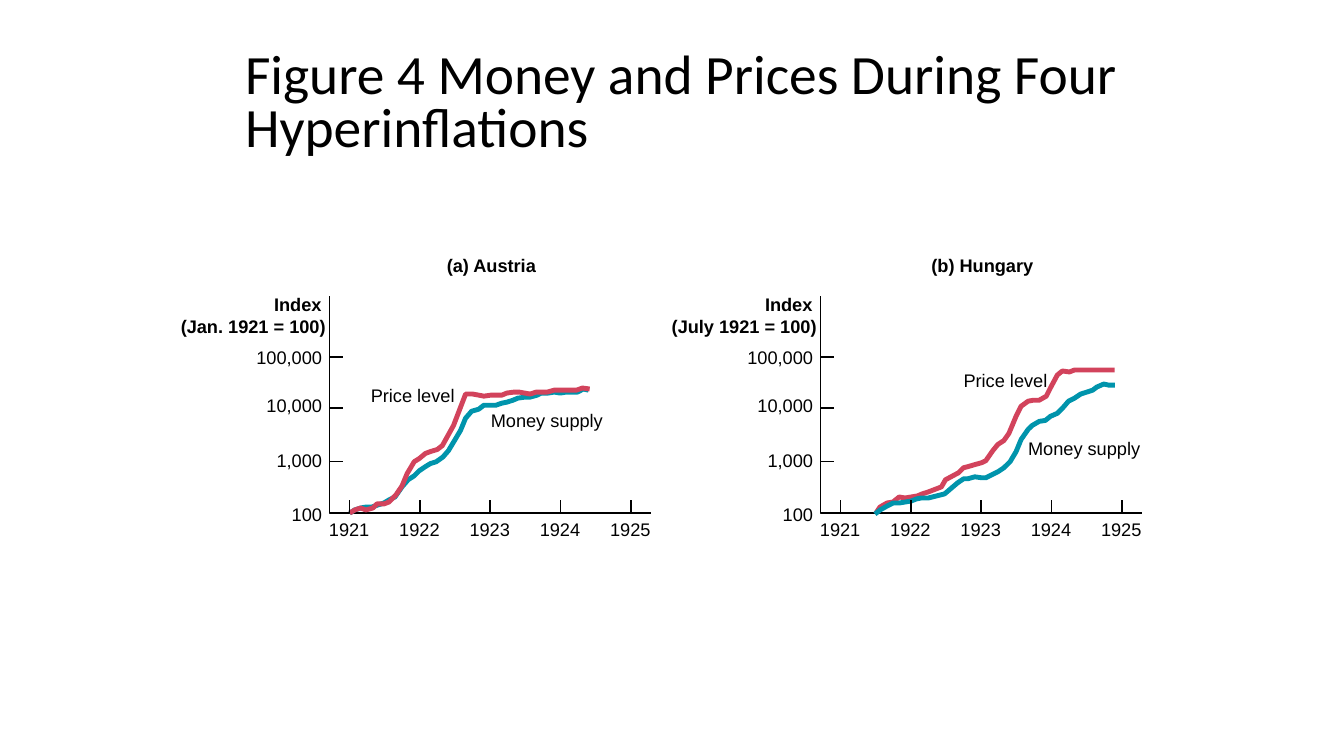
"""Build a slide comparing money and prices in two hyperinflations."""
import dataclasses

import lxml.etree
import pptx
import pptx.dml.color
import pptx.enum.shapes
import pptx.enum.text
import pptx.oxml.ns
import pptx.util

Pt = pptx.util.Pt
ALIGN = pptx.enum.text.PP_ALIGN


@dataclasses.dataclass(frozen=True)
class Theme:
    ink: str = "000000"
    price: str = "D2435C"
    money: str = "0094AC"
    title_font: str = "Calibri"
    label_font: str = "Arial"
    title_size: float = 39.6
    label_size: float = 13
    axis_width: float = 1.13
    curve_width: float = 3.5


def write(tf, text, *, font, size, color, bold=False, align=ALIGN.LEFT, spacing=None):
    p = tf.paragraphs[0]
    p.alignment = align
    if spacing:
        p.line_spacing = spacing
    r = p.add_run()
    r.text = text
    r.font.name = font
    r.font.size = Pt(size)
    r.font.bold = bold
    r.font.color.rgb = pptx.dml.color.RGBColor.from_string(color)


class Canvas:
    def __init__(self, slide, theme):
        self.slide = slide
        self.theme = theme

    def title(self, text, left, top, width, height):
        sp = self.slide.shapes.title
        sp.left, sp.top, sp.width, sp.height = map(Pt, (left, top, width, height))
        tf = sp.text_frame
        tf.auto_size = pptx.enum.text.MSO_AUTO_SIZE.NONE
        tf.vertical_anchor = pptx.enum.text.MSO_ANCHOR.MIDDLE
        write(tf, text, font=self.theme.title_font, size=self.theme.title_size,
              color=self.theme.ink, spacing=0.8)

    def label(self, text, left, top, width, **style):
        sp = self.slide.shapes.add_textbox(Pt(left), Pt(top), Pt(width), Pt(15.8))
        tf = sp.text_frame
        tf.margin_left = tf.margin_top = tf.margin_right = tf.margin_bottom = 0
        tf.word_wrap = False
        tf.auto_size = pptx.enum.text.MSO_AUTO_SIZE.SHAPE_TO_FIT_TEXT
        write(tf, text, font=self.theme.label_font, size=self.theme.label_size,
              color=self.theme.ink, **style)

    def stroke(self, sp, color, width):
        sp.line.color.rgb = pptx.dml.color.RGBColor.from_string(color)
        sp.line.width = Pt(width)

    def tick(self, x1, y1, x2, y2):
        cxn = self.slide.shapes.add_connector(
            pptx.enum.shapes.MSO_CONNECTOR.STRAIGHT, Pt(x1), Pt(y1), Pt(x2), Pt(y2))
        self.stroke(cxn, self.theme.ink, self.theme.axis_width)
        lxml.etree.SubElement(cxn._element.spPr, pptx.oxml.ns.qn("a:effectLst"))

    def curve(self, points, color, width):
        (x, y), *rest = [(Pt(px), Pt(py)) for px, py in points]
        fb = self.slide.shapes.build_freeform(x, y)
        fb.add_line_segments(rest, close=False)
        sp = fb.convert_to_shape()
        sp.shadow.inherit = False
        sp.fill.background()
        self.stroke(sp, color, width)

    def panel(self, left, base, title, unit, price_at, money_at, curves):
        self.curve([(left, base - 154.8), (left, base), (left + 229.7, base)],
                   self.theme.ink, self.theme.axis_width)
        self.label(title, left + 79, base - 185, 73.2, bold=True, align=ALIGN.CENTER)
        for text, right, rise, width in (("Index", 5.8, 157, 34.2), (unit, 2.9, 141.1, 104.8)):
            self.label(text, left - right - width, base - rise, width,
                       bold=True, align=ALIGN.RIGHT)
        for text, rise, width in SCALE_LABELS:
            self.label(text, left - 5.4 - width, base - rise, width, align=ALIGN.RIGHT)
        for rise in SCALE_TICKS:
            self.tick(left, base - rise, left + 9.4, base - rise)
        for text, (x, rise), width in (("Price level", price_at, 60.1),
                                       ("Money supply", money_at, 81.4)):
            self.label(text, left + x, base - rise, width)
        for color, points in curves:
            self.curve([(left + x, base - rise) for x, rise in points],
                       color, self.theme.curve_width)
        for i, year in enumerate(range(1921, 1926)):
            x = left + 14.4 + 50.2 * i
            self.tick(x, base, x, base - 9.4)
            self.label(str(year), x - 15, base + 3.6, 29.2, align=ALIGN.CENTER)


SCALE_LABELS = [("100", 7.2, 22), ("1,000", 45.4, 33.1),
                ("10,000", 85, 40.3), ("100,000", 118.8, 47.2)]
SCALE_TICKS = [36.7, 74.9, 111.6]

AUSTRIA_MONEY = [
    (14.4, 0), (18, 2.2), (22.3, 3.6), (25.9, 4.3), (30.2, 4.3), (34.6, 5.8),
    (38.9, 7.2), (42.5, 9.4), (46.8, 11.5), (51.8, 18.7), (56.2, 23.8), (60.5, 26.6),
    (64.1, 30.2), (68.4, 33.1), (72, 35.3), (76.3, 36.7), (81, 40), (85, 44.6),
    (93.6, 59), (97.2, 67.7), (101.5, 72.7), (106.6, 74.2), (110.2, 77), (118.8, 77),
    (123.1, 78.5), (126.7, 79.2), (131, 80.6), (134.6, 82.1), (139.7, 82.8),
    (143.3, 82.8), (148.3, 84.2), (151.2, 85.7), (156.2, 85.7), (160.6, 86.4),
    (164.9, 85.7), (169.2, 86.4), (177.1, 86.4), (181.4, 88.6), (185, 87.8)]
AUSTRIA_PRICE = [
    (14.4, 0), (18, 2.2), (22.3, 3.6), (25.9, 2.2), (31, 3.6), (33.8, 6.5),
    (38.9, 6.5), (42.5, 7.9), (47.5, 13), (51.8, 19.4), (55.4, 28.1), (60.5, 36.7),
    (64.1, 38.9), (68.4, 42.5), (72, 43.9), (77, 45.4), (80.6, 48.2), (88.6, 62.6),
    (97.2, 85), (102.2, 85), (106.6, 84.2), (110.2, 83.5), (115.2, 84.2),
    (123.1, 84.2), (126.7, 85.7), (131.8, 86.4), (135.4, 86.4), (143.3, 85),
    (147.6, 86.4), (155.5, 86.4), (160.6, 87.8), (176.4, 87.8), (180.7, 89.3),
    (185.8, 88.6)]
HUNGARY_PRICE = [
    (39.6, 0), (42.5, 4.3), (47.5, 7.2), (51.8, 7.9), (56.2, 11.5), (60.5, 10.8),
    (69.1, 12.2), (72.7, 13.7), (77, 15.1), (86.4, 18.7), (89.3, 23.8), (98.6, 28.8),
    (102.2, 32.4), (105.1, 33.1), (110.2, 34.6), (115.2, 36), (118.1, 37.4),
    (123.1, 44.6), (126.7, 49), (131, 51.8), (134.6, 56.9), (139.7, 69.1),
    (143.3, 76.3), (148.3, 79.9), (151.9, 80.6), (156.2, 80.6), (161.3, 83.5),
    (164.2, 89.3), (169.2, 98.6), (172.8, 101.5), (177.8, 100.8), (181.4, 102.2),
    (210.2, 102.2)]
HUNGARY_MONEY = [
    (38.9, -0.7), (42.5, 2.2), (47.5, 5), (51.8, 7.2), (56.2, 7.2), (60.5, 7.9),
    (64.8, 8.6), (68.4, 10.1), (72, 10.8), (77, 10.8), (88.6, 13.7), (97.9, 21.6),
    (102.2, 24.5), (105.1, 24.5), (110.2, 25.9), (115.2, 25.2), (118.1, 25.2),
    (122.4, 27.4), (126.7, 29.5), (131, 32.4), (135.4, 36.7), (139.7, 43.9),
    (143.3, 52.6), (148.3, 59.8), (151.2, 62.6), (156.2, 65.5), (160.6, 66.2),
    (164.2, 69.1), (169.2, 71.3), (172.8, 74.9), (177.1, 79.9), (181.4, 82.1),
    (185.8, 85), (190.1, 86.4), (194.4, 87.8), (197.3, 90), (202.3, 92.2),
    (205.9, 91.4), (210.2, 91.4)]


def main():
    prs = pptx.Presentation()
    prs.slide_width, prs.slide_height = Pt(960), Pt(540)
    theme = Theme()
    canvas = Canvas(prs.slides.add_slide(prs.slide_layouts[5]), theme)
    canvas.title("Figure 4 Money and Prices During Four Hyperinflations", 167.8, 48.2, 648, 54)
    canvas.panel(235.4, 366.5, "(a) Austria", "(Jan. 1921 = 100)", (29.5, 92.2), (115.2, 74.2),
                 [(theme.money, AUSTRIA_MONEY), (theme.price, AUSTRIA_PRICE)])
    canvas.panel(586.1, 366.5, "(b) Hungary", "(July 1921 = 100)", (102.2, 103), (148.3, 54),
                 [(theme.price, HUNGARY_PRICE), (theme.money, HUNGARY_MONEY)])
    prs.save("out.pptx")


if __name__ == "__main__":
    main()
